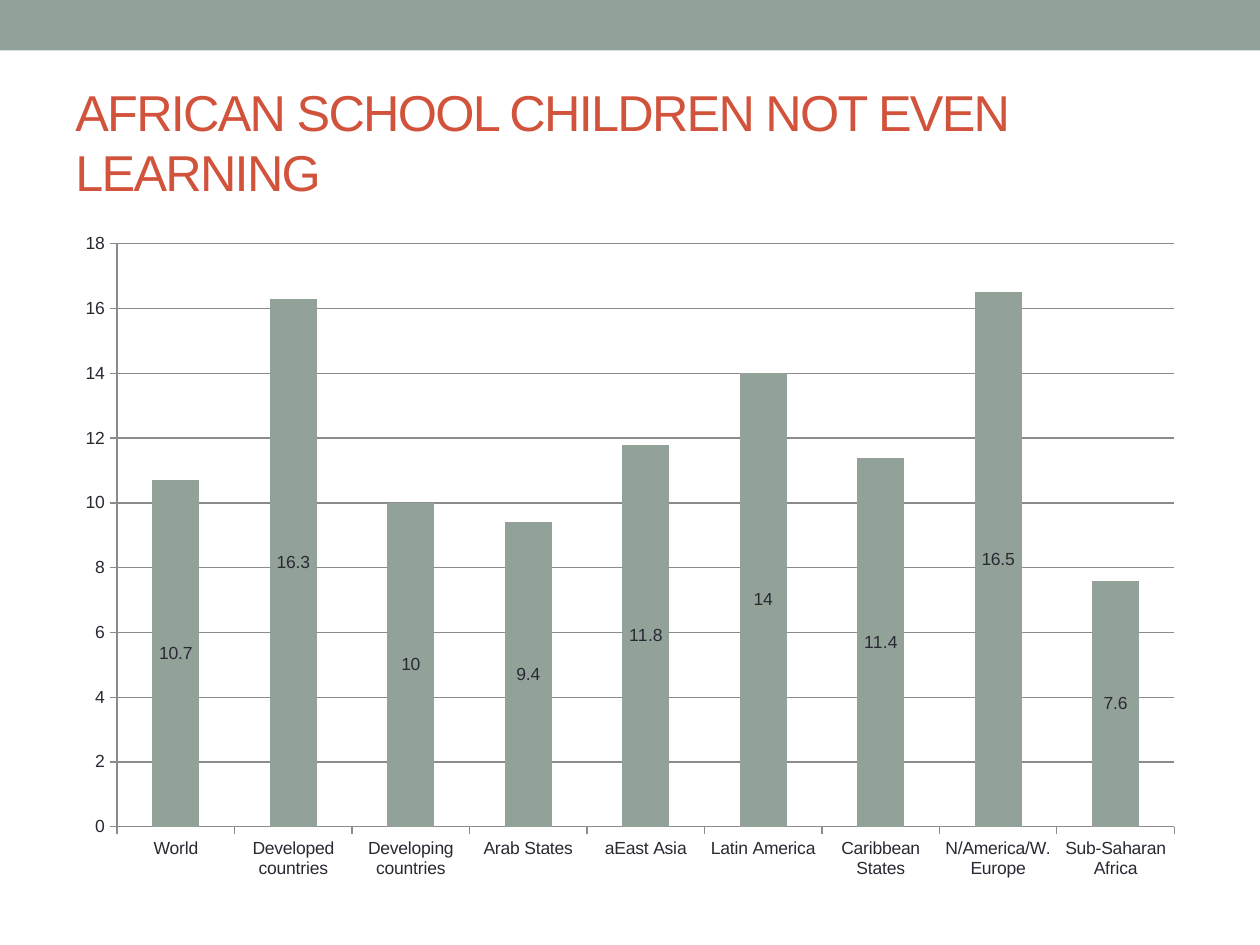
from pptx import Presentation
from pptx.chart.data import CategoryChartData as Data
from pptx.dml.color import RGBColor
from pptx.enum.chart import XL_CHART_TYPE as Kind, XL_LABEL_POSITION as Spot, XL_TICK_MARK as Tick
from pptx.enum.shapes import MSO_SHAPE as Shape
from pptx.enum.text import MSO_ANCHOR as Anchor
from pptx.util import Inches, Pt

SAGE = RGBColor(0x93, 0xA2, 0x99)
RUST = RGBColor(0xD2, 0x53, 0x3C)
INK = RGBColor(0x29, 0x29, 0x34)
GRAY = RGBColor(0x8B, 0x8B, 0x8B)

TITLE = "AFRICAN SCHOOL CHILDREN NOT EVEN LEARNING"
ROWS = [
    ("World", 10.7),
    ("Developed countries", 16.3),
    ("Developing countries", 10),
    ("Arab States", 9.4),
    ("aEast Asia", 11.8),
    ("Latin America", 14),
    ("Caribbean States", 11.4),
    ("N/America/W. Europe", 16.5),
    ("Sub-Saharan Africa", 7.6),
]
BAND = (0, 0, 10, 0.4)
HEAD = (0.5, 0.58, 9, 1.08)
PLOT = (0.5, 1.75, 9, 5.33)


def put(item, **vals):
    for key, val in vals.items():
        setattr(item, key, val)


def place(box):
    return [Inches(n) for n in box]


def style(font, size, color):
    put(font, name="Arial", size=Pt(size))
    font.color.rgb = color


def paint(form, color):
    form.fill.solid()
    form.fill.fore_color.rgb = color


def add_band(slide):
    band = slide.shapes.add_shape(Shape.RECTANGLE, *place(BAND))
    band.shadow.inherit = False
    paint(band, SAGE)
    band.line.fill.background()


def add_title(slide):
    frame = slide.shapes.add_textbox(*place(HEAD)).text_frame
    put(frame, word_wrap=True, vertical_anchor=Anchor.MIDDLE)
    run = frame.paragraphs[0].add_run()
    run.text = TITLE
    style(run.font, 28.8, RUST)
    run._r.get_or_add_rPr().set("spc", "-100")


def add_bars(slide):
    data = Data()
    names, vals = zip(*ROWS)
    data.categories = names
    data.add_series("Series 1", vals)
    chart = slide.shapes.add_chart(Kind.COLUMN_STACKED, *place(PLOT), data).chart
    put(chart, has_legend=False, has_title=False)
    style(chart.font, 10, INK)

    plot = chart.plots[0]
    put(plot, gap_width=150, overlap=100, vary_by_categories=False, has_data_labels=True)
    put(plot.data_labels, show_value=True, position=Spot.CENTER,
        number_format="General", number_format_is_linked=False)
    paint(plot.series[0].format, SAGE)

    for axis in (chart.category_axis, chart.value_axis):
        put(axis, major_tick_mark=Tick.OUTSIDE, minor_tick_mark=Tick.NONE)
        axis.format.line.color.rgb = GRAY
    rule = chart.value_axis
    put(rule, minimum_scale=0, maximum_scale=18, major_unit=2, has_major_gridlines=True)
    rule.major_gridlines.format.line.color.rgb = GRAY


def main():
    deck = Presentation()
    put(deck, slide_width=Inches(10), slide_height=Inches(7.5))
    slide = deck.slides.add_slide(deck.slide_layouts[6])
    for draw in (add_band, add_title, add_bars):
        draw(slide)
    deck.save("out.pptx")


if __name__ == "__main__":
    main()
